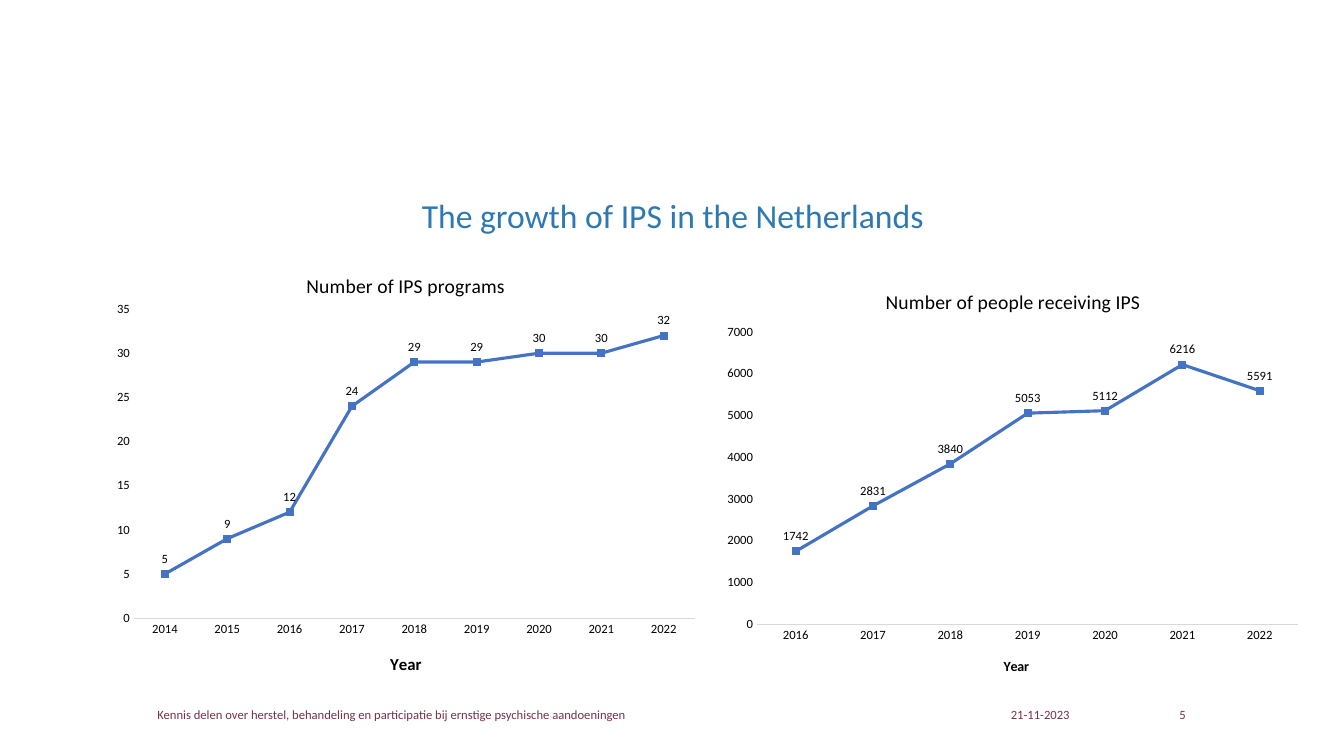
from dataclasses import dataclass

from lxml import etree
from pptx import Presentation
from pptx.chart.data import CategoryChartData as Data
from pptx.dml.color import RGBColor as Color
from pptx.enum.chart import XL_CHART_TYPE as Kind, XL_LABEL_POSITION as Spot, XL_TICK_MARK as Tick
from pptx.enum.text import MSO_ANCHOR as Anchor, PP_ALIGN as Align
from pptx.oxml.ns import qn
from pptx.util import Pt


@dataclass(frozen=True)
class Theme:
    face: str = "Calibri"
    blue: str = "2E79B1"
    plum: str = "753349"
    black: str = "000000"
    line: str = "4472C4"
    axis: str = "D9D9D9"
    head: float = 24
    name: float = 14
    small: float = 9


def style(font, face, size, color, bold=False):
    font.name, font.size, font.bold = face, Pt(size), bold
    font.color.rgb = Color.from_string(color)


def write(frame, text, face, size, color, bold=False, align=Align.LEFT, space=None):
    para = frame.paragraphs[0]
    para.alignment, para.line_spacing = align, space
    run = para.add_run()
    run.text = text
    style(run.font, face, size, color, bold)


def place(node, index, **parts):
    """Fix a chart part at fractions of the chart's size."""
    for old in node.findall(qn("c:layout")):
        node.remove(old)
    layout = etree.Element(qn("c:layout"))
    node.insert(index, layout)
    fixed = etree.SubElement(layout, qn("c:manualLayout"))
    if "w" in parts:
        etree.SubElement(fixed, qn("c:layoutTarget")).set("val", "inner")
    for mode in ("xMode", "yMode"):
        etree.SubElement(fixed, qn(f"c:{mode}")).set("val", "edge")
    for key, val in parts.items():
        etree.SubElement(fixed, qn(f"c:{key}")).set("val", str(val))


class Deck:
    def __init__(self, theme):
        self.theme = theme
        self.file = Presentation()
        self.file.slide_width, self.file.slide_height = Pt(960), Pt(540)
        self.slide = self.file.slides.add_slide(self.file.slide_layouts[6])

    def text(self, box, text, size, color, inset=0, **form):
        frame = self.slide.shapes.add_textbox(*map(Pt, box)).text_frame
        frame.word_wrap, frame.vertical_anchor = True, Anchor.MIDDLE
        frame.margin_left = frame.margin_right = Pt(inset)
        frame.margin_top = frame.margin_bottom = Pt(inset / 2)
        write(frame, text, self.theme.face, size, color, **form)

    def title(self, owner, text, size, spot, bold=False):
        owner.has_title = True
        title = getattr(owner, "chart_title", None) or owner.axis_title
        look = self.theme
        write(title.text_frame, text, look.face, size, look.black, bold, Align.CENTER)
        place(title._element, 1, x=spot[0], y=spot[1])

    def chart(self, box, name, start, vals, top, step, year, plot, spots):
        look = self.theme
        data = Data()
        data.categories = [str(start + i) for i in range(len(vals))]
        data.add_series("Series 1", vals)
        chart = self.slide.shapes.add_chart(Kind.LINE, *map(Pt, box), data).chart
        chart.has_legend = False
        style(chart.font, look.face, 10, look.black)
        self.title(chart, name, look.name, spots[0])
        place(chart._chartSpace.chart.plotArea, 0, **dict(zip("xywh", plot)))

        # Axes
        cat, val = chart.category_axis, chart.value_axis
        for axis in (cat, val):
            axis.has_major_gridlines = False
            axis.major_tick_mark = axis.minor_tick_mark = Tick.NONE
            style(axis.tick_labels.font, look.face, look.small, look.black)
        cat.format.line.color.rgb = Color.from_string(look.axis)
        cat.format.line.width = Pt(0.75)
        val.format.line.fill.background()
        val.minimum_scale, val.maximum_scale, val.major_unit = 0, top, step
        self.title(cat, "Year", year, spots[1], bold=True)

        # Line and its labels
        row = chart.plots[0].series[0]
        row.smooth = False
        row.marker.style = None
        row.format.line.color.rgb = Color.from_string(look.line)
        row.format.line.width = Pt(2.25)
        tags = row.data_labels
        tags.show_value, tags.position = True, Spot.ABOVE
        style(tags.font, look.face, look.small, look.black)


def main():
    look = Theme()
    deck = Deck(look)

    # Heading
    deck.text((114, 113, 733, 85), "The growth of IPS in the Netherlands", look.head,
              look.blue, inset=7.2, align=Align.CENTER, space=0.9)

    # Footer
    for left, width, text, align in (
        (722, 57, "21-11-2023", Align.LEFT),
        (807, 40, "5", Align.RIGHT),
        (95, 369, "Kennis delen over herstel, behandeling en participatie "
                  "bij ernstige psychische aandoeningen", Align.CENTER),
    ):
        deck.text((left, 496, width, 29), text, look.small, look.plum, align=align)

    # Charts
    deck.chart((511, 188, 425, 307), "Number of people receiving IPS", 2016,
               (1742, 2831, 3840, 5053, 5112, 6216, 5591), 7000, 1000, year=10,
               plot=(0.07, 0.16, 0.91, 0.68), spots=((0.28, 0.05), (0.48, 0.91)))
    deck.chart((74, 176, 431, 320), "Number of IPS programs", 2014,
               (5, 9, 12, 24, 29, 29, 30, 30, 32), 35, 5, year=12,
               plot=(0.05, 0.14, 0.93, 0.69), spots=((0.33, 0.05), (0.47, 0.9)))

    deck.file.save("out.pptx")


if __name__ == "__main__":
    main()
